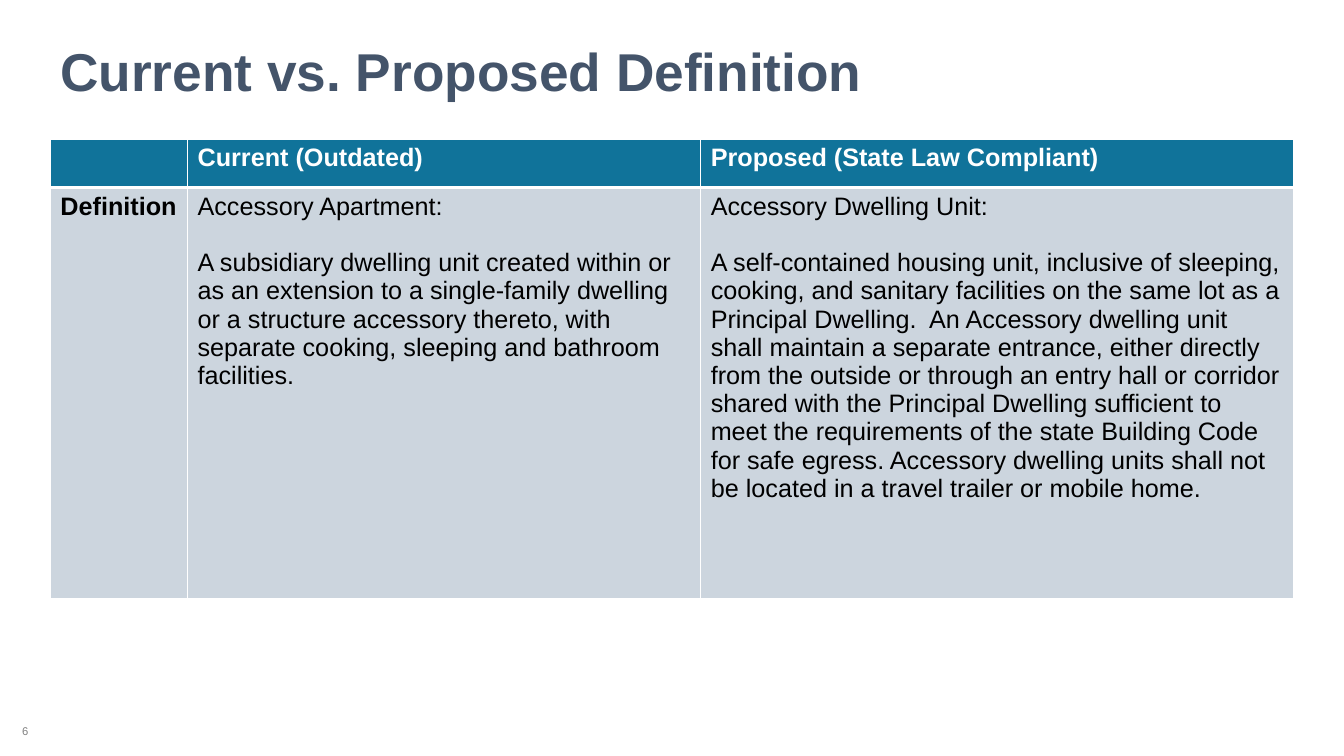
from lxml import etree
from pptx import Presentation
from pptx.dml.color import RGBColor
from pptx.enum.text import MSO_ANCHOR, PP_ALIGN
from pptx.oxml.ns import qn
from pptx.util import Inches, Pt

MIDDLE = MSO_ANCHOR.MIDDLE
LEFT, CENTER = PP_ALIGN.LEFT, PP_ALIGN.CENTER

COLORS = {
    "title": "44546A",
    "page": "808080",
    "header": "10739A",
    "body": "CCD5DE",
    "white": "FFFFFF",
    "black": "000000",
}
FONT = "Arial"
COLUMN_WIDTHS = [1.36, 5.09, 5.88]
ROW_HEIGHTS = [0.48, 4.08]
HEADER_RULE = 3
GRID_RULE = 1

DEFINITIONS = [
    ["", "Current (Outdated)", "Proposed (State Law Compliant)"],
    [
        "Definition",
        "Accessory Apartment:\n"
        "A subsidiary dwelling unit created within or as an extension to a "
        "single-family dwelling or a structure accessory thereto, with "
        "separate cooking, sleeping and bathroom facilities.",
        "Accessory Dwelling Unit:\n"
        "A self-contained housing unit, inclusive of sleeping, cooking, and "
        "sanitary facilities on the same lot as a Principal Dwelling.  An "
        "Accessory dwelling unit shall maintain a separate entrance, either "
        "directly from the outside or through an entry hall or corridor shared "
        "with the Principal Dwelling sufficient to meet the requirements of the "
        "state Building Code for safe egress. Accessory dwelling units shall "
        "not be located in a travel trailer or mobile home.",
    ],
]


def rgb(name):
    return RGBColor.from_string(COLORS[name])


def style_runs(paragraph, size, color, bold=False):
    for run in paragraph.runs:
        run.font.name = FONT
        run.font.size = Pt(size)
        run.font.bold = bold
        run.font.color.rgb = rgb(color)


def add_label(slide, box, text, size, color, bold=False, align=LEFT):
    """Place one vertically centred line of text and return its paragraph."""
    frame = slide.shapes.add_textbox(*map(Inches, box)).text_frame
    frame.word_wrap = True
    frame.vertical_anchor = MIDDLE
    frame.text = text
    line = frame.paragraphs[0]
    line.alignment = align
    style_runs(line, size, color, bold)
    return line


def set_borders(cell, top, bottom):
    """Draw white cell borders; must run before the cell fill is set."""
    properties = cell._tc.get_or_add_tcPr()
    widths = {"L": GRID_RULE, "R": GRID_RULE, "T": top, "B": bottom}
    for side, width in widths.items():
        line = etree.SubElement(properties, qn(f"a:ln{side}"), w=str(Pt(width)))
        fill = etree.SubElement(line, qn("a:solidFill"))
        etree.SubElement(fill, qn("a:srgbClr"), val=COLORS["white"])


def add_comparison(slide, box):
    table = slide.shapes.add_table(
        len(ROW_HEIGHTS), len(COLUMN_WIDTHS), *map(Inches, box)
    ).table
    for column, width in zip(table.columns, COLUMN_WIDTHS):
        column.width = Inches(width)
    for row, height in zip(table.rows, ROW_HEIGHTS):
        row.height = Inches(height)

    for r, texts in enumerate(DEFINITIONS):
        is_header = r == 0
        for c, text in enumerate(texts):
            cell = table.cell(r, c)
            if is_header:
                set_borders(cell, GRID_RULE, HEADER_RULE)
            else:
                set_borders(cell, HEADER_RULE, GRID_RULE)
            cell.fill.solid()
            cell.fill.fore_color.rgb = rgb("header" if is_header else "body")
            cell.text = text
            for i, paragraph in enumerate(cell.text_frame.paragraphs):
                if i:
                    paragraph.space_before = Pt(20)
                style_runs(paragraph, 18, "white" if is_header else "black",
                           bold=is_header or c == 0)


def main():
    deck = Presentation()
    deck.slide_width, deck.slide_height = Inches(13.33), Inches(7.5)
    slide = deck.slides.add_slide(deck.slide_layouts[6])
    title = add_label(slide, (0.5, 0.26, 12.33, 0.96),
                      "Current vs. Proposed Definition", 38, "title", bold=True)
    title.line_spacing = 0.9
    add_comparison(slide, (0.5, 1.38, sum(COLUMN_WIDTHS), sum(ROW_HEIGHTS)))
    add_label(slide, (0, 7, 0.5, 0.5), "6", 8, "page", align=CENTER)
    deck.save("out.pptx")


if __name__ == "__main__":
    main()
